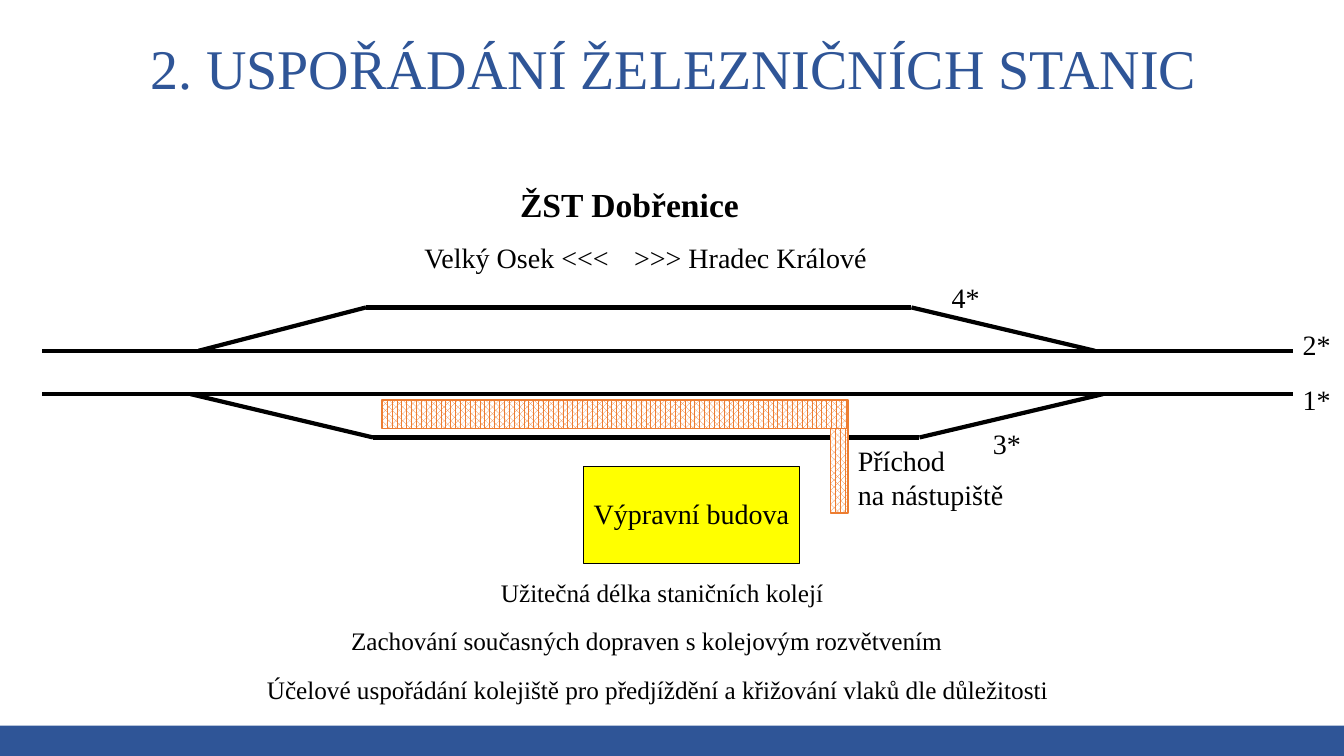
from pptx import Presentation
from pptx.dml.color import RGBColor
from pptx.enum.dml import MSO_PATTERN as Pat
from pptx.enum.shapes import MSO_CONNECTOR as Conn, MSO_SHAPE as Kind
from pptx.enum.text import MSO_ANCHOR as Anchor, MSO_AUTO_SIZE as Fit, PP_ALIGN as Align
from pptx.util import Inches, Pt
from lxml.etree import SubElement
from pptx.oxml.ns import qn

BLUE = RGBColor(0x2F, 0x55, 0x97)
BLACK = RGBColor(0, 0, 0)
WHITE = RGBColor(255, 255, 255)
YELLOW = RGBColor(255, 255, 0)
ORANGE = RGBColor(0xED, 0x7D, 0x31)
FONT = "Times New Roman"


def write(frame, text, size=20, color=BLACK, bold=False, align=Align.LEFT, gap=None):
    for i, line in enumerate(text.split("\n")):
        para = frame.add_paragraph() if i else frame.paragraphs[0]
        para.alignment = align
        para.line_spacing = gap
        run = para.add_run()
        run.text = line
        run.font.name = FONT
        run.font.size = Pt(size)
        run.font.bold = bold
        run.font.color.rgb = color


class Sketch:
    def __init__(self, slide):
        self.slide = slide
        self.shapes = slide.shapes

    def title(self, text, *box):
        head = self.shapes.title
        head.left, head.top, head.width, head.height = map(Inches, box)
        frame = head.text_frame
        frame.auto_size = Fit.NONE
        frame.vertical_anchor = Anchor.MIDDLE
        write(frame, text, size=40, color=BLUE, align=Align.CENTER, gap=0.9)

    def rect(self, *box, fill=None, line=None):
        shape = self.shapes.add_shape(Kind.RECTANGLE, *map(Inches, box))
        shape.shadow.inherit = False
        if fill:
            shape.fill.solid()
            shape.fill.fore_color.rgb = fill
        else:
            shape.fill.patterned()
            shape.fill.pattern = Pat.PERCENT_70
            shape.fill.fore_color.rgb = ORANGE
            shape.fill.back_color.rgb = WHITE
        if line:
            shape.line.color.rgb = line
            shape.line.width = Pt(1)
        else:
            shape.line.fill.background()

    def track(self, *points):
        for start, end in zip(points, points[1:]):
            rail = self.shapes.add_connector(Conn.STRAIGHT, *map(Inches, start + end))
            rail.line.color.rgb = BLACK
            rail.line.width = Pt(3)
            SubElement(rail.element.spPr, qn("a:effectLst"))

    def label(self, text, *box, wrap=False, **style):
        frame = self.shapes.add_textbox(*map(Inches, box)).text_frame
        frame.word_wrap = wrap
        frame.auto_size = Fit.SHAPE_TO_FIT_TEXT
        write(frame, text, **style)


def main():
    deck = Presentation()
    deck.slide_width, deck.slide_height = Inches(13.33), Inches(7.5)
    plan = Sketch(deck.slides.add_slide(deck.slide_layouts[5]))

    plan.rect(0, 7.2, 13.33, 0.3, fill=BLUE)
    plan.title("2. USPOŘÁDÁNÍ ŽELEZNIČNÍCH STANIC", 0.93, -0.02, 11.5, 1.45)

    four, two, one, three = 3.05, 3.48, 3.91, 4.34
    west, east = 0.42, 12.82
    plan.track((west, two), (east, two))
    plan.track((west, one), (east, one))
    plan.track((1.89, one), (3.7, three), (9.12, three), (10.94, one))
    plan.track((1.97, two), (3.63, four), (9.04, four), (10.86, two))

    plan.rect(3.79, 3.97, 4.62, 0.28, line=ORANGE)
    plan.rect(5.79, 4.63, 2.14, 0.96, fill=YELLOW, line=BLACK)
    plan.rect(8.24, 4.25, 0.17, 0.84, line=ORANGE)

    plan.label("ŽST Dobřenice", 5.06, 1.78, 2.39, 0.5, size=24, bold=True)
    plan.label("Velký Osek <<<", 4.11, 2.34, 2.1, 0.44)
    plan.label(">>> Hradec Králové", 6.19, 2.34, 2.53, 0.44)
    plan.label("Výpravní budova", 5.79, 4.88, 2.16, 0.44)
    plan.label("Příchod\nna nástupiště", 8.41, 4.35, 1.66, 0.77)
    for text, x, y in (("1*", east, 3.75), ("2*", east, 3.2),
                       ("3*", 9.75, 4.18), ("4*", 9.34, 2.73)):
        plan.label(text, x, y, 0.48, 0.44)

    notes = (
        ("Účelové uspořádání kolejiště pro předjíždění a křižování vlaků dle důležitosti ", 0.29, 6.64),
        ("Zachování současných dopraven s kolejovým rozvětvením", 0.15, 6.15),
    )
    for text, x, y in notes:
        plan.label(text, x, y, 12.53, 0.4, wrap=True, size=18, align=Align.CENTER)
    plan.label("Užitečná délka staničních kolejí", 4.87, 5.68, 3.5, 0.4, size=18)

    deck.save("out.pptx")


if __name__ == "__main__":
    main()
